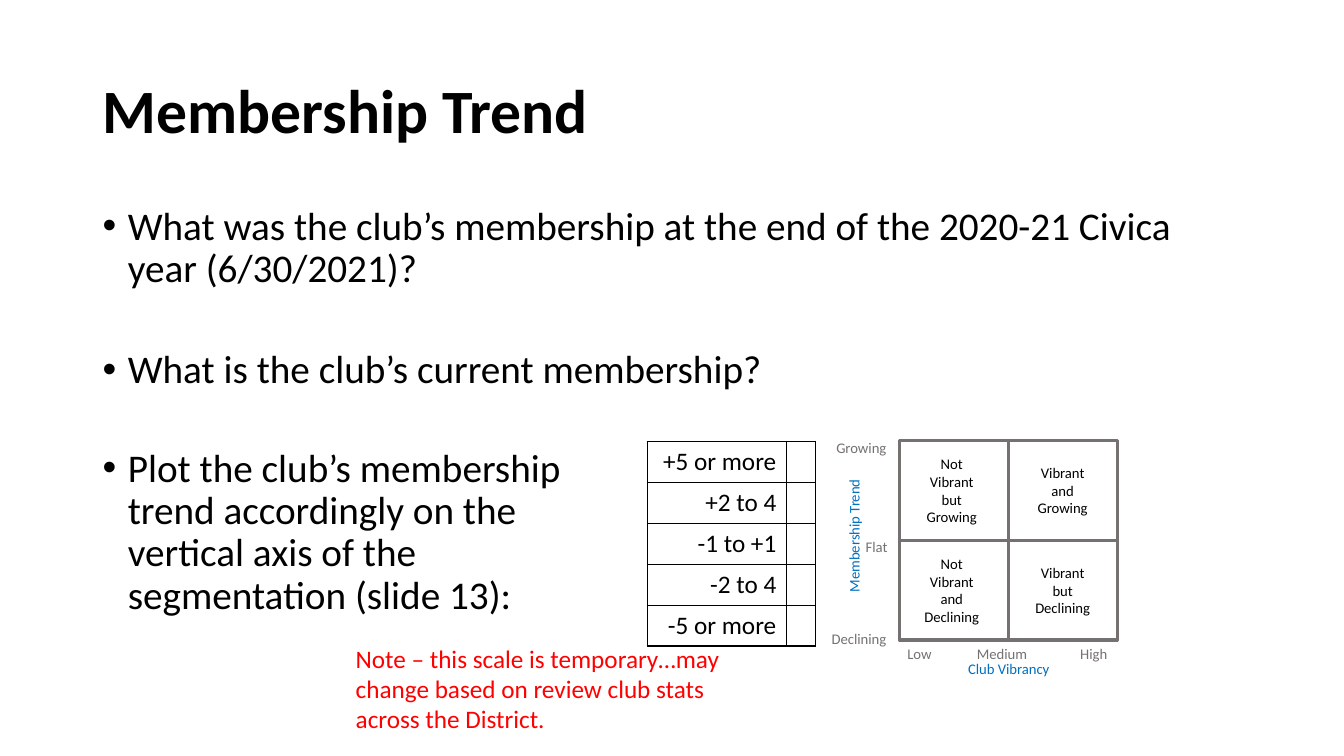
from lxml.etree import SubElement
from pptx import Presentation
from pptx.dml.color import RGBColor
from pptx.enum.shapes import MSO_SHAPE as Preset
from pptx.enum.text import MSO_ANCHOR as Anchor, MSO_AUTO_SIZE as AutoSize, PP_ALIGN as Align
from pptx.oxml.ns import qn
from pptx.util import Inches, Pt

BLACK = RGBColor(0x00, 0x00, 0x00)
GRAY = RGBColor(0x76, 0x71, 0x71)
BLUE = RGBColor(0x00, 0x70, 0xC0)
RED = RGBColor(0xFF, 0x00, 0x00)
FONT = "Calibri"

TITLE = "Membership Trend"
# Text and the space before it in points; \v breaks a line
QUESTIONS = [
    ("What was the club’s membership at the end of the 2020-21 Civica year (6/30/2021)?", 10),
    ("What is the club’s current membership?", 42),
    ("Plot the club’s membership\vtrend accordingly on the\vvertical axis of the\v"
     "segmentation (slide 13):", 40),
]
SCALE = ["+5 or more", "+2 to 4", "-1 to +1", "-2 to 4", "-5 or more"]
NOTE = ("Note – this scale is temporary…may change based on review club stats "
        "across the District.")
SEGMENTS = [
    ["Not Vibrant but Growing", "Vibrant and Growing"],
    ["Not Vibrant and Declining", "Vibrant but Declining"],
]

MARGIN, CONTENT_WIDTH = 0.92, 11.5
SCALE_LEFT, SCALE_TOP, SCALE_ROW = 6.42, 4.38, 0.406
SCALE_COLUMNS = [1.38, 0.29]
GRID_LEFT, GRID_TOP, CELL_WIDTH, CELL_HEIGHT = 8.92, 4.37, 1.08, 0.99
GRID_BOTTOM = GRID_TOP + 2 * CELL_HEIGHT
SEGMENT_WIDTH = 0.86
SEGMENT_LEFTS = [0.09, 0.11]
SEGMENT_HEIGHTS = [0.81, 0.63]

# Text, box (left, top, width, height), colour, alignment, rotation
AXIS_LABELS = [
    ("Growing", (8.13, 4.3, 0.76, 0.28), GRAY, Align.RIGHT, 0),
    ("Flat", (8.35, 5.29, 0.55, 0.28), GRAY, Align.RIGHT, 0),
    ("Declining", (8.13, 6.2, 0.76, 0.28), GRAY, Align.RIGHT, 0),
    ("Low", (8.9, GRID_BOTTOM, 0.55, 0.28), GRAY, Align.LEFT, 0),
    ("Medium", (9.59, GRID_BOTTOM, 0.81, 0.28), GRAY, Align.LEFT, 0),
    ("High", (10.53, GRID_BOTTOM, 0.55, 0.28), GRAY, Align.RIGHT, 0),
    ("Club Vibrancy", (9.17, 6.5, 1.67, 0.28), BLUE, Align.CENTER, 0),
    ("Membership Trend", (7.72, 5.16, 1.53, 0.31), BLUE, Align.CENTER, 270),
]


def write(paragraph, text, size, color=BLACK, bold=False, **layout):
    """Fill a paragraph; layout holds paragraph attributes such as alignment."""
    paragraph.text = text
    for name, value in layout.items():
        setattr(paragraph, name, value)
    font_values = {"name": FONT, "size": Pt(size), "bold": bold}
    for run in paragraph.runs:
        for name, value in font_values.items():
            setattr(run.font, name, value)
        run.font.color.rgb = color


def add_box(shapes, box, anchor=Anchor.TOP, auto_size=AutoSize.SHAPE_TO_FIT_TEXT):
    shape = shapes.add_textbox(*map(Inches, box))
    frame_values = {"word_wrap": True, "auto_size": auto_size, "vertical_anchor": anchor}
    for name, value in frame_values.items():
        setattr(shape.text_frame, name, value)
    return shape


def add_bullet(paragraph):
    properties = paragraph._p.get_or_add_pPr()
    properties.set("marL", str(Inches(0.25)))
    properties.set("indent", str(-Inches(0.25)))
    SubElement(properties, qn("a:buFont"), typeface="Arial")
    SubElement(properties, qn("a:buChar"), char="•")


def add_borders(cell):
    properties = cell._tc.get_or_add_tcPr()
    for index, side in enumerate(("lnL", "lnR", "lnT", "lnB")):
        line = SubElement(properties, qn(f"a:{side}"), w=str(Pt(1)))
        fill = SubElement(line, qn("a:solidFill"))
        SubElement(fill, qn("a:srgbClr"), val=str(BLACK))
        properties.remove(line)
        properties.insert(index, line)  # borders come before the fill


def add_heading_and_questions(slide):
    title = add_box(slide.shapes, (MARGIN, 0.4, CONTENT_WIDTH, 1.45),
                    Anchor.MIDDLE, AutoSize.NONE)
    write(title.text_frame.paragraphs[0], TITLE, 44, bold=True, line_spacing=0.9)
    body = add_box(slide.shapes, (MARGIN, 2, CONTENT_WIDTH, 4.76), auto_size=AutoSize.NONE)
    frame = body.text_frame
    for index, (text, space) in enumerate(QUESTIONS):
        paragraph = frame.add_paragraph() if index else frame.paragraphs[0]
        write(paragraph, text, 28, line_spacing=0.9, space_before=Pt(space))
        add_bullet(paragraph)


def add_scale(slide):
    box = (SCALE_LEFT, SCALE_TOP, sum(SCALE_COLUMNS), SCALE_ROW * len(SCALE))
    table = slide.shapes.add_table(len(SCALE), 2, *map(Inches, box)).table
    table.first_row = table.horz_banding = False
    for column, width in zip(table.columns, SCALE_COLUMNS):
        column.width = Inches(width)
    for row, label in enumerate(SCALE):
        table.rows[row].height = Inches(SCALE_ROW)
        write(table.cell(row, 0).text_frame.paragraphs[0], label, 18, alignment=Align.RIGHT)
    for cell in table.iter_cells():
        cell.fill.background()
        add_borders(cell)


def add_segmentation(slide):
    shapes = slide.shapes.add_group_shape().shapes
    for row, names in enumerate(SEGMENTS):
        for column, name in enumerate(names):
            left = GRID_LEFT + column * CELL_WIDTH
            top = GRID_TOP + row * CELL_HEIGHT
            square = shapes.add_shape(
                Preset.RECTANGLE, *map(Inches, (left, top, CELL_WIDTH, CELL_HEIGHT)))
            square.shadow.inherit = False
            square.fill.background()
            square.line.color.rgb = GRAY
            square.line.width = Pt(2.25)
            height = SEGMENT_HEIGHTS[column]
            box = (left + SEGMENT_LEFTS[column], top + (CELL_HEIGHT - height) / 2,
                   SEGMENT_WIDTH, height)
            label = add_box(shapes, box, Anchor.MIDDLE)
            write(label.text_frame.paragraphs[0], name, 10.5, alignment=Align.CENTER)
    for text, box, color, alignment, rotation in AXIS_LABELS:
        label = add_box(shapes, box)
        label.rotation = rotation
        write(label.text_frame.paragraphs[0], text, 10.5, color, alignment=alignment)


def main():
    presentation = Presentation()
    presentation.slide_width, presentation.slide_height = Inches(13.33), Inches(7.5)
    slide = presentation.slides.add_slide(presentation.slide_layouts[6])
    add_heading_and_questions(slide)
    add_scale(slide)
    add_segmentation(slide)
    note = add_box(slide.shapes, (3.43, 6.33, 3.83, 1.01))
    write(note.text_frame.paragraphs[0], NOTE, 18, RED)
    presentation.save("out.pptx")


if __name__ == "__main__":
    main()
